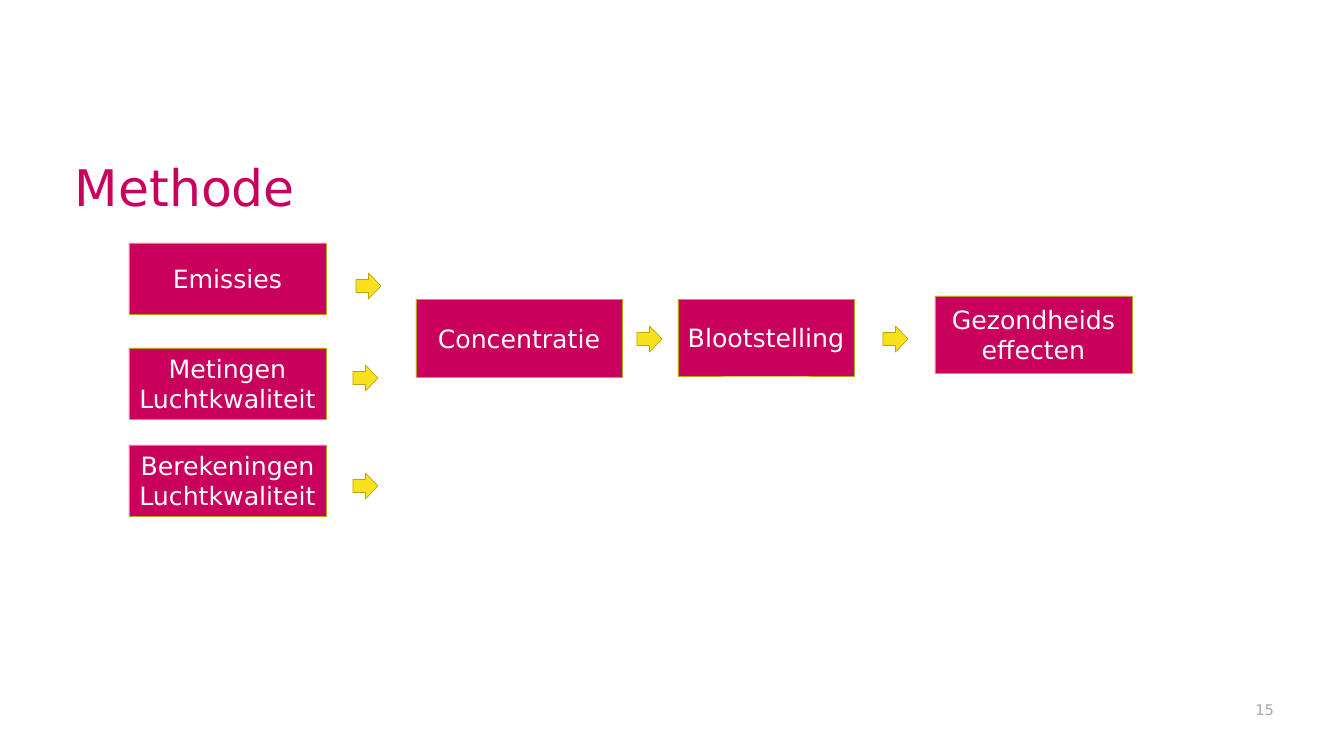
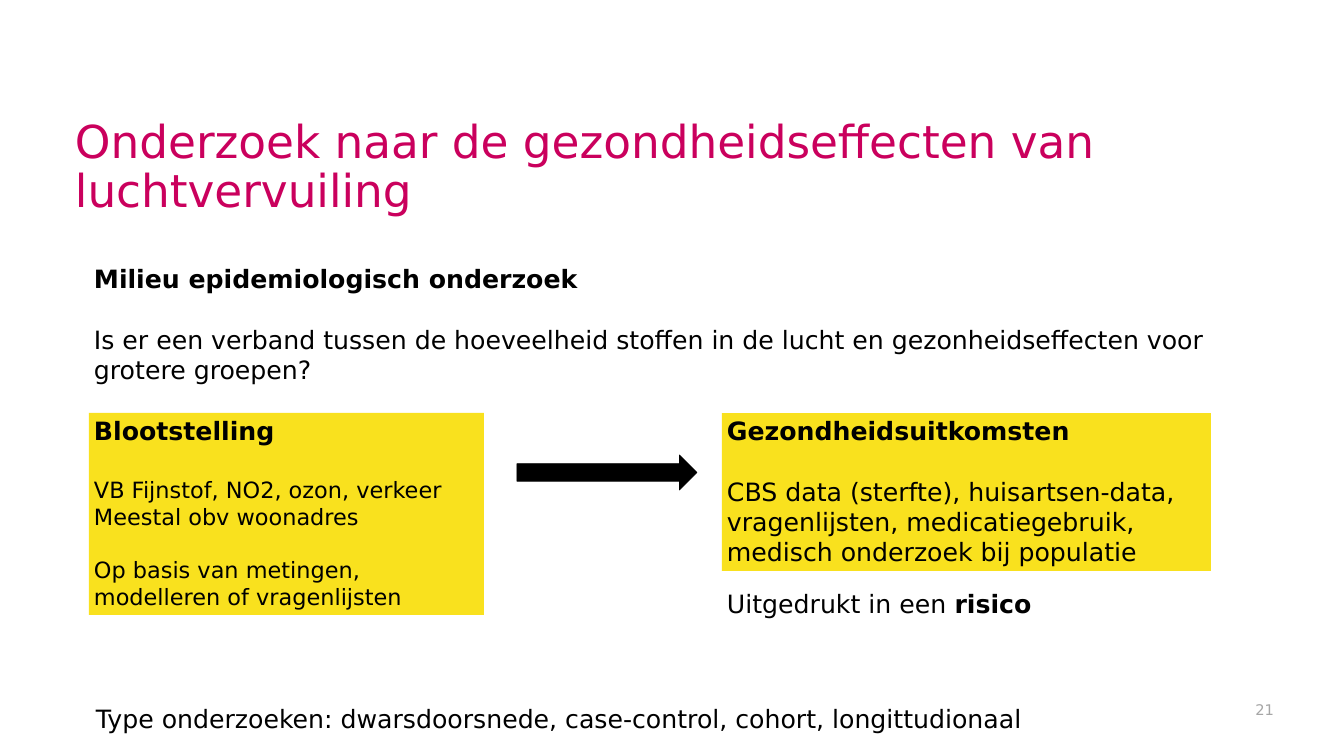
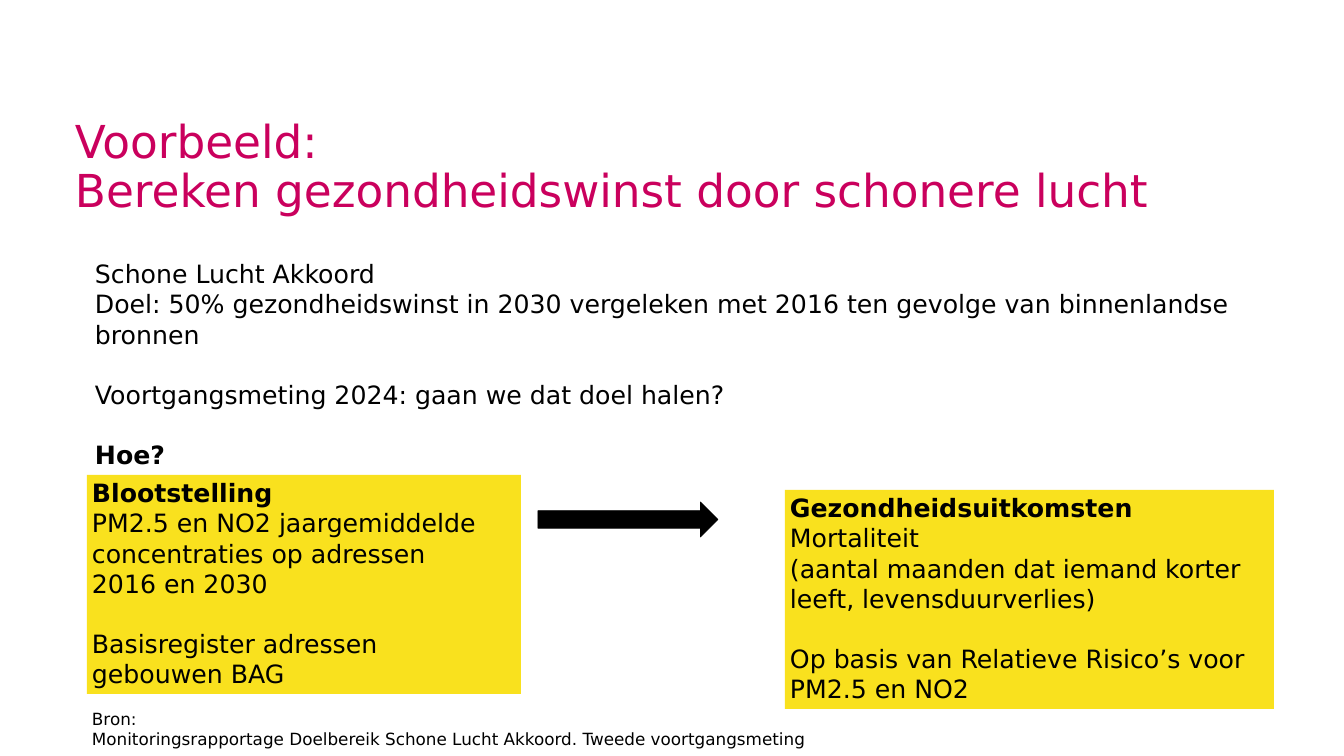
from dataclasses import dataclass

from pptx import Presentation
from pptx import util as u
from pptx.dml.color import RGBColor
from pptx.enum import shapes, text

EMU_PER_PX = 914400 / 50.4


@dataclass(frozen=True)
class Theme:
    font: str = "DejaVu Sans"
    magenta: RGBColor = RGBColor(0xCA, 0x00, 0x5D)
    yellow: RGBColor = RGBColor(0xF9, 0xE1, 0x1E)
    olive: RGBColor = RGBColor(0xB8, 0xA6, 0x16)
    black: RGBColor = RGBColor(0x00, 0x00, 0x00)
    white: RGBColor = RGBColor(0xFF, 0xFF, 0xFF)
    grey: RGBColor = RGBColor(0xA6, 0xA6, 0xA6)
    title: float = 72
    long_title: float = 64.8
    body: float = 36
    detail: float = 32
    source: float = 24
    number: float = 21
    line_height: float = 1.2


THEME = Theme()


@dataclass(frozen=True)
class Line:
    text: str
    size: float = THEME.body
    bold: bool = False
    skip: float = 0
    strong: str = ""


def px(value):
    return u.Emu(round(value * EMU_PER_PX))


def write(shape, lines, color=THEME.black, align=text.PP_ALIGN.LEFT,
          anchor=text.MSO_ANCHOR.TOP, spacing=None):
    frame = shape.text_frame
    frame.word_wrap = True
    frame.vertical_anchor = anchor
    for index, line in enumerate(lines):
        paragraph = frame.add_paragraph() if index else frame.paragraphs[0]
        paragraph.text = line.text
        paragraph.alignment = align
        if spacing:
            paragraph.line_spacing = spacing
        if line.skip:
            paragraph.space_before = u.Pt(round(line.skip * THEME.line_height))
        font = paragraph.font
        font.name = THEME.font
        font.size = u.Pt(line.size)
        font.bold = line.bold
        font.color.rgb = color
        if line.strong:
            run = paragraph.add_run()
            run.text = line.strong
            run.font.bold = True


def add_text(slide, box, lines, fill=None, **style):
    shape = slide.shapes.add_textbox(*map(px, box))
    if fill is not None:
        shape.fill.solid()
        shape.fill.fore_color.rgb = fill
    write(shape, lines, **style)
    return shape


def add_preset(slide, kind, box, fill, line):
    shape = slide.shapes.add_shape(kind, *map(px, box))
    shape.shadow.inherit = False
    shape.fill.solid()
    shape.fill.fore_color.rgb = fill
    shape.line.color.rgb = line
    shape.line.width = u.Pt(1)
    return shape


def add_step(slide, box, *words):
    shape = add_preset(slide, shapes.MSO_SHAPE.RECTANGLE, box, THEME.magenta, THEME.olive)
    write(shape, [Line(word) for word in words], color=THEME.white,
          align=text.PP_ALIGN.CENTER, anchor=text.MSO_ANCHOR.MIDDLE)


def add_arrow(slide, box, fill, line):
    add_preset(slide, shapes.MSO_SHAPE.RIGHT_ARROW, box, fill, line)


def add_page(presentation, title, title_size=THEME.long_title, number=None):
    slide = presentation.slides.add_slide(presentation.slide_layouts[6])
    add_text(slide, (70, 116, 1204, 104), [Line(title, title_size)], color=THEME.magenta,
             anchor=text.MSO_ANCHOR.BOTTOM, spacing=0.9)
    if number:
        footer = add_text(slide, (722, 686, 552, 35), [Line(str(number), THEME.number)],
                          color=THEME.grey, align=text.PP_ALIGN.RIGHT,
                          anchor=text.MSO_ANCHOR.BOTTOM)
        footer.text_frame.margin_right = 0
    return slide


def build_method(presentation):
    slide = add_page(presentation, "Methode", THEME.title, number=15)
    add_step(slide, (129, 243, 197, 71), "Emissies")
    add_step(slide, (129, 348, 197, 71), "Metingen", "Luchtkwaliteit")
    add_step(slide, (129, 445, 197, 71), "Berekeningen Luchtkwaliteit")
    add_step(slide, (416, 299, 206, 78), "Concentratie")
    add_step(slide, (678, 299, 176, 77), "Blootstelling")
    add_step(slide, (935, 296, 197, 77), "Gezondheids effecten")
    for left, top in ((356, 273), (353, 365), (353, 473), (637, 326), (883, 326)):
        add_arrow(slide, (left, top, 25, 26), THEME.yellow, THEME.olive)


def build_research(presentation):
    slide = add_page(presentation,
                     "Onderzoek naar de gezondheidseffecten van luchtvervuiling", number=21)
    add_text(slide, (89, 261, 1122, 188), [
        Line("Milieu epidemiologisch onderzoek", bold=True),
        Line("Is er een verband tussen de hoeveelheid stoffen in de lucht en "
             "gezonheidseffecten voor grotere groepen?", skip=THEME.body),
    ])
    add_text(slide, (89, 413, 395, 202), [
        Line("Blootstelling", bold=True),
        Line("VB Fijnstof, NO2, ozon, verkeer", THEME.detail, skip=THEME.body),
        Line("Meestal obv woonadres", THEME.detail),
        Line("Op basis van metingen, modelleren of vragenlijsten", THEME.detail,
             skip=THEME.detail),
    ], fill=THEME.yellow)
    add_text(slide, (722, 413, 489, 158), [
        Line("Gezondheidsuitkomsten", bold=True),
        Line("CBS data (sterfte), huisartsen-data, vragenlijsten, medicatiegebruik, "
             "medisch onderzoek bij populatie", skip=THEME.body),
    ], fill=THEME.yellow)
    add_arrow(slide, (517, 455, 180, 35), THEME.black, THEME.black)
    add_text(slide, (722, 586, 372, 36), [Line("Uitgedrukt in een ", strong="risico")])
    add_text(slide, (91, 701, 1183, 36), [
        Line("Type onderzoeken: dwarsdoorsnede, case-control, cohort, longittudionaal"),
    ])


def build_example(presentation):
    slide = add_page(presentation,
                     "Voorbeeld:\vBereken gezondheidswinst door schonere lucht")
    add_text(slide, (90, 256, 1145, 371), [
        Line("Schone Lucht Akkoord"),
        Line("Doel: 50% gezondheidswinst in 2030 vergeleken met 2016 ten gevolge van "
             "binnenlandse bronnen"),
        Line("Voortgangsmeting 2024: gaan we dat doel halen?", skip=THEME.body),
        Line("Hoe?", bold=True, skip=THEME.body),
    ])
    add_text(slide, (87, 475, 434, 219), [
        Line("Blootstelling", bold=True),
        Line("PM2.5 en NO2 jaargemiddelde concentraties op adressen"),
        Line("2016 en 2030"),
        Line("Basisregister adressen gebouwen BAG", skip=THEME.body),
    ], fill=THEME.yellow)
    add_text(slide, (785, 490, 489, 219), [
        Line("Gezondheidsuitkomsten", bold=True),
        Line("Mortaliteit"),
        Line("(aantal maanden dat iemand korter leeft, levensduurverlies)"),
        Line("Op basis van Relatieve Risico’s voor PM2.5 en NO2", skip=THEME.body),
    ], fill=THEME.yellow)
    add_arrow(slide, (538, 502, 180, 35), THEME.black, THEME.black)
    add_text(slide, (87, 706, 1204, 46), [
        Line("Bron:", THEME.source),
        Line("Monitoringsrapportage Doelbereik Schone Lucht Akkoord. "
             "Tweede voortgangsmeting", THEME.source),
    ])


def main():
    presentation = Presentation()
    presentation.slide_width = px(1344)
    presentation.slide_height = px(756)
    build_method(presentation)
    build_research(presentation)
    build_example(presentation)
    presentation.save("out.pptx")


if __name__ == "__main__":
    main()
